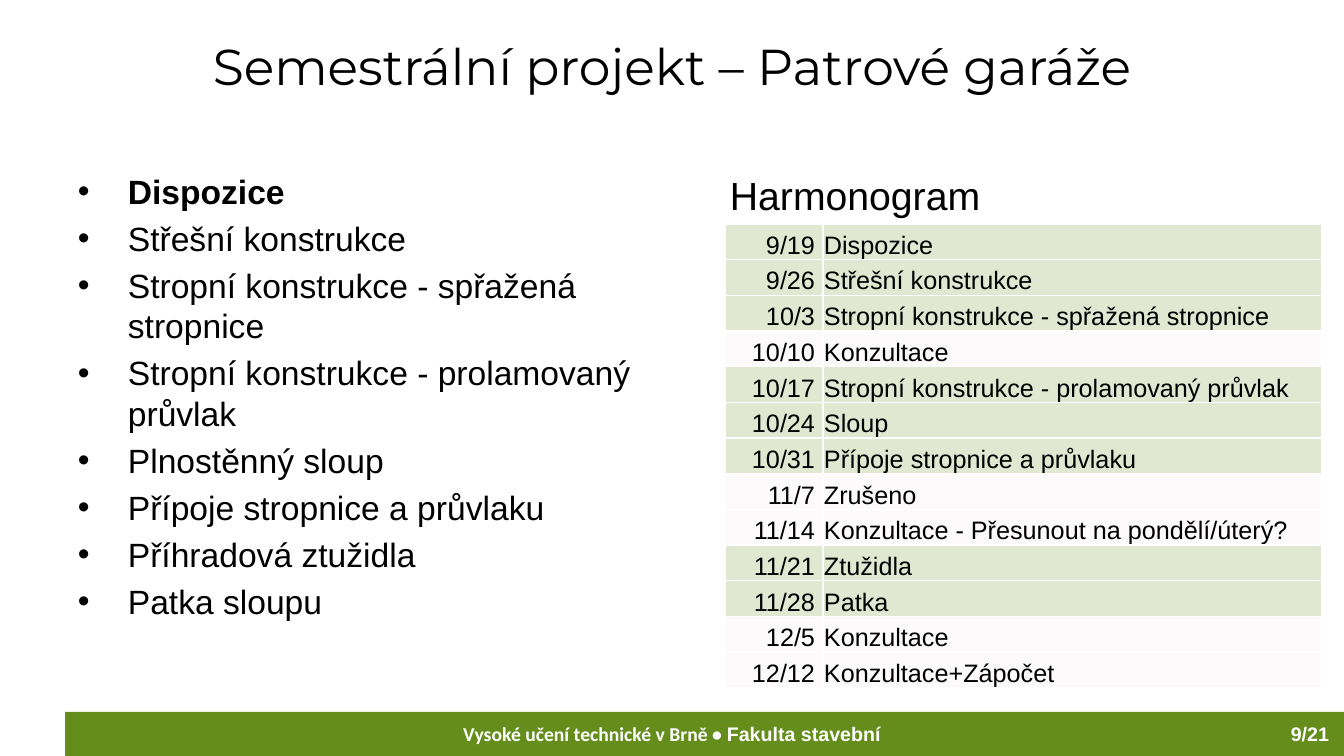
"""Build the semester project slide with a topic list and a schedule table."""
from dataclasses import dataclass

from lxml import etree
from pptx import Presentation
from pptx import util as u
from pptx.dml.color import RGBColor
from pptx.enum import shapes, text
from pptx.oxml import ns

TITLE = "Semestrální projekt – Patrové garáže"
TOPICS = [
    "Dispozice",
    "Střešní konstrukce",
    "Stropní konstrukce - spřažená stropnice",
    "Stropní konstrukce - prolamovaný průvlak",
    "Plnostěnný sloup",
    "Přípoje stropnice a průvlaku",
    "Příhradová ztužidla",
    "Patka sloupu",
]
CURRENT_TOPIC = "Dispozice"
SCHEDULE_TITLE = "Harmonogram"
SCHEDULE = [
    ("9/19", "Dispozice"),
    ("9/26", "Střešní konstrukce"),
    ("10/3", "Stropní konstrukce - spřažená stropnice"),
    ("10/10", "Konzultace"),
    ("10/17", "Stropní konstrukce - prolamovaný průvlak"),
    ("10/24", "Sloup"),
    ("10/31", "Přípoje stropnice a průvlaku"),
    ("11/7", "Zrušeno"),
    ("11/14", "Konzultace - Přesunout na pondělí/úterý?"),
    ("11/21", "Ztužidla"),
    ("11/28", "Patka"),
    ("12/5", "Konzultace"),
    ("12/12", "Konzultace+Zápočet"),
]
NO_LESSON = ("Konzultace", "Zrušeno")
UNIVERSITY = "Vysoké učení technické v Brně • "
FACULTY = "Fakulta stavební"
PAGE_NUMBER = "9/21"


@dataclass(frozen=True)
class Theme:
    """Colours, fonts and type sizes in points."""
    green: str = "658D1B"
    pale: str = "F4E7E7"
    white: str = "FFFFFF"
    black: str = "000000"
    heading: str = "Montserrat"
    body: str = "Arial"
    footer: str = "Calibri"
    title_size: int = 36
    schedule_size: int = 28
    topic_size: int = 24
    table_size: int = 18
    footer_size: int = 14
    tint: int = 20


THEME = Theme()
ALIGN = text.PP_ALIGN
SLIDE_WIDTH, SLIDE_HEIGHT = 1344, 756
TABLE_LEFT, TABLE_TOP, TABLE_HEIGHT = 725, 224, 464
COLUMNS = (98, 499)
EMU_PER_PX = u.Inches(1) / 100.8


def px(length):
    """Turn pixels into EMU."""
    return u.Emu(round(length * EMU_PER_PX))


def style(font, size, color, name=THEME.body, bold=False):
    """Set the look of a font."""
    font.size, font.name, font.bold = u.Pt(size), name, bold
    font.color.rgb = RGBColor.from_string(color)


def add_text(page, place, lines, align=ALIGN.LEFT):
    """Add a wrapping text box and return its paragraphs."""
    frame = page.shapes.add_textbox(*map(px, place)).text_frame
    frame.word_wrap = True
    frame.text = "\n".join(lines)
    for para in frame.paragraphs:
        para.alignment = align
    return frame.paragraphs


def add_bullet(para, indent):
    """Give a paragraph a hanging round bullet."""
    props = para._p.get_or_add_pPr()
    props.set("marL", str(px(indent)))
    props.set("indent", str(-px(indent)))
    etree.SubElement(props, ns.qn("a:buFont")).set("typeface", THEME.body)
    etree.SubElement(props, ns.qn("a:buChar")).set("char", "•")


def paint_cell(cell, color):
    """Fill a cell with a tint and draw white borders around it."""
    cell.fill.solid()
    cell.fill.fore_color.rgb = RGBColor.from_string(color)
    props = cell._tc.get_or_add_tcPr()
    shade = props.find(".//" + ns.qn("a:srgbClr"))
    etree.SubElement(shade, ns.qn("a:alpha")).set("val", str(THEME.tint * 1000))
    for index, side in enumerate("LRTB"):
        border = etree.Element(ns.qn(f"a:ln{side}"), w=str(u.Pt(1)))
        fill = etree.SubElement(border, ns.qn("a:solidFill"))
        etree.SubElement(fill, ns.qn("a:srgbClr")).set("val", THEME.white)
        props.insert(index, border)


def add_footer(page):
    """Add the green band with the school and the page number."""
    band = page.shapes.add_shape(
        shapes.MSO_SHAPE.RECTANGLE, *map(px, (65, 712, SLIDE_WIDTH - 65, 44)))
    band.shadow.inherit = False
    band.fill.solid()
    band.fill.fore_color.rgb = RGBColor.from_string(THEME.green)
    band.line.fill.background()
    school = add_text(page, (0, 717, SLIDE_WIDTH, 34), [""], ALIGN.CENTER)[0]
    for words, name in ((UNIVERSITY, THEME.footer), (FACULTY, THEME.body)):
        span = school.add_run()
        span.text = words
        style(span.font, THEME.footer_size, THEME.white, name, True)
    number = add_text(page, (1207, 717, 132, 34), [PAGE_NUMBER], ALIGN.RIGHT)[0]
    style(number.font, THEME.footer_size, THEME.white, bold=True)


def add_topics(page):
    """Add the bulleted topics with the current one in bold."""
    paras = add_text(page, (68, 166, 597, 512), TOPICS)
    for index, (para, topic) in enumerate(zip(paras, TOPICS)):
        add_bullet(para, 50)
        if index:
            para.space_before = u.Pt(THEME.topic_size * 0.2)
        style(para.font, THEME.topic_size, THEME.black, bold=topic == CURRENT_TOPIC)


def add_schedule(page):
    """Add the schedule table with lessons in green."""
    table = page.shapes.add_table(
        len(SCHEDULE), len(COLUMNS),
        *map(px, (TABLE_LEFT, TABLE_TOP, sum(COLUMNS), TABLE_HEIGHT))).table
    table.first_row = table.horz_banding = False
    for column, width in zip(table.columns, COLUMNS):
        column.width = px(width)
    for row, entry in zip(table.rows, SCHEDULE):
        row.height = px(TABLE_HEIGHT / len(SCHEDULE))
        color = THEME.pale if entry[1].startswith(NO_LESSON) else THEME.green
        for cell, words, align, right in zip(
                row.cells, entry, (ALIGN.RIGHT, ALIGN.LEFT), (8, 1)):
            cell.text = words
            cell.vertical_anchor = text.MSO_ANCHOR.BOTTOM
            cell.margin_left = cell.margin_top = px(1)
            cell.margin_right, cell.margin_bottom = px(right), 0
            para = cell.text_frame.paragraphs[0]
            para.alignment = align
            style(para.font, THEME.table_size, THEME.black)
            paint_cell(cell, color)


def main():
    """Put the slide together and save it."""
    deck = Presentation()
    deck.slide_width, deck.slide_height = px(SLIDE_WIDTH), px(SLIDE_HEIGHT)
    page = deck.slides.add_slide(deck.slide_layouts[6])
    add_footer(page)
    title = add_text(page, (67, 30, 1210, 110), [TITLE], ALIGN.CENTER)[0]
    style(title.font, THEME.title_size, THEME.black, THEME.heading)
    add_topics(page)
    heading = add_text(page, (720, 166, 597, 50), [SCHEDULE_TITLE])[0]
    style(heading.font, THEME.schedule_size, THEME.black)
    add_schedule(page)
    deck.save("out.pptx")


if __name__ == "__main__":
    main()
